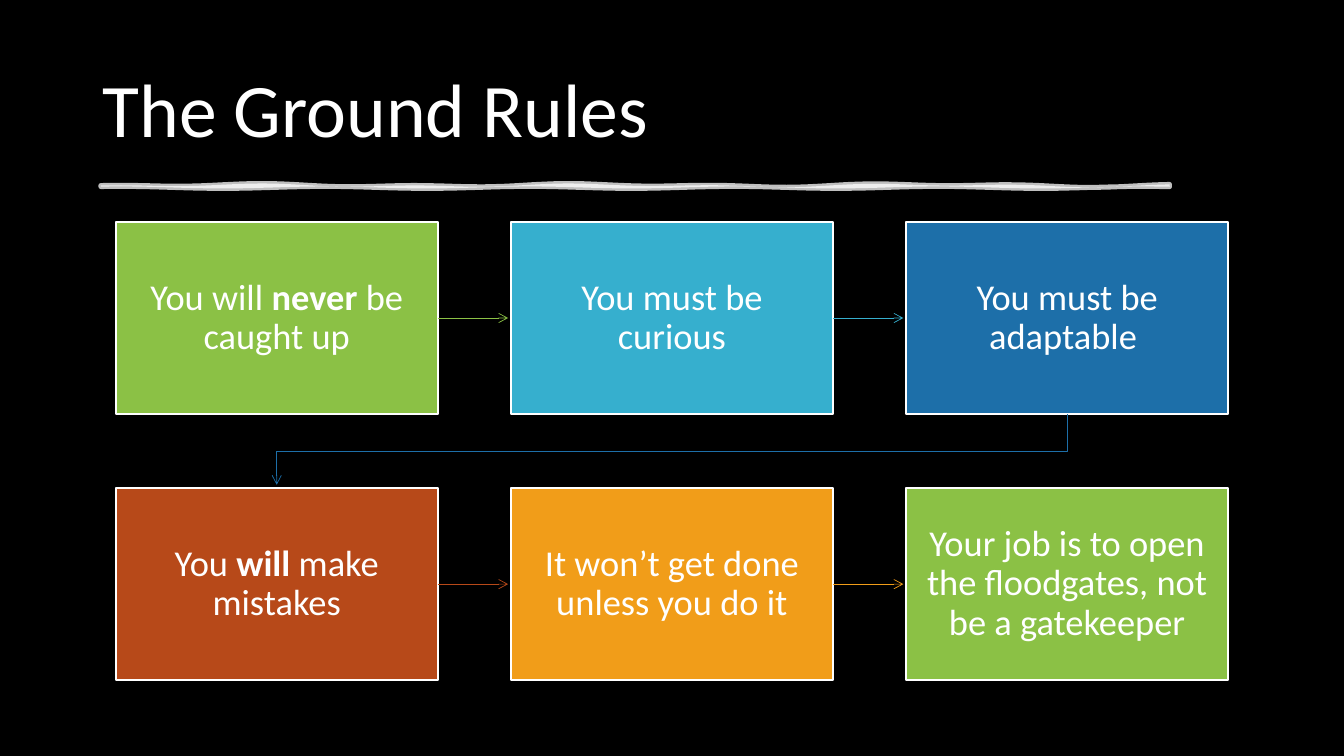
from math import sin
from lxml.etree import SubElement
from pptx import Presentation
from pptx.dml.color import RGBColor
from pptx.enum.shapes import MSO_CONNECTOR, MSO_SHAPE
from pptx.enum.text import MSO_ANCHOR, PP_ALIGN
from pptx.oxml.ns import qn
from pptx.util import Inches, Pt

COLORS = {
    "black": "000000", "white": "FFFFFF", "green": "8BC145", "cyan": "36AFCE",
    "blue": "1D6FA9", "rust": "B74919", "orange": "F19D19",
}
FONT = "Calibri"
COLUMNS = 3
ARROW_GAP = 0.03
RULES = [
    ("green", [("You will ", False), ("never", True), (" be caught up", False)]),
    ("cyan", [("You must be curious", False)]),
    ("blue", [("You must be adaptable ", False)]),
    ("rust", [("You ", False), ("will", True), (" make mistakes", False)]),
    ("orange", [("It won’t get done unless you do it", False)]),
    ("green", [("Your job is to open the floodgates, not be a gatekeeper", False)]),
]


def rgb(name):
    return RGBColor.from_string(COLORS[name])


def write_text(shape, spans, size, align=PP_ALIGN.LEFT, inset=0.1, inset_y=0.05):
    frame = shape.text_frame
    frame.word_wrap = True
    frame.vertical_anchor = MSO_ANCHOR.MIDDLE
    frame.margin_left = frame.margin_right = Inches(inset)
    frame.margin_top = frame.margin_bottom = Inches(inset_y)
    para = frame.paragraphs[0]
    para.alignment = align
    para.line_spacing = 0.9
    for text, bold in spans:
        span = para.add_run()
        span.text = text
        span.font.name = FONT
        span.font.size = Pt(size)
        span.font.bold = bold
        span.font.color.rgb = rgb("white")


def style_line(shape, color, width, arrow=False):
    shape.line.color.rgb = rgb(color)
    shape.line.width = Pt(width)
    if arrow:
        line = shape.line._get_or_add_ln()
        SubElement(line, qn("a:tailEnd"), type="arrow")


def draw_path(page, points, close):
    corners = [(Inches(x), Inches(y)) for x, y in points]
    builder = page.shapes.build_freeform(*corners[0])
    builder.add_line_segments(corners[1:], close=close)
    shape = builder.convert_to_shape()
    shape.shadow.inherit = False
    return shape


def add_title(page, left, top, width, height):
    box = page.shapes.add_textbox(*map(Inches, (left, top, width, height)))
    write_text(box, [("The Ground Rules", False)], 54)


def add_brush_stroke(page, left, top, width, height):
    steps = 106
    xs = [left + width * step / steps for step in range(steps + 1)]
    upper = [(x, top + 0.01 * sin(4.2 * x) + 0.01 * sin(1.9 * x)) for x in xs]
    lower = [(x, top + height + 0.01 * sin(3.1 * x + 1)) for x in reversed(xs)]
    stroke = draw_path(page, upper + lower, True)
    stroke.fill.solid()
    stroke.fill.fore_color.rgb = rgb("white")
    style_line(stroke, "white", 3.5)
    for color in stroke._element.spPr.iter(qn("a:srgbClr")):
        SubElement(color, qn("a:alpha"), val="75000")


def add_rule(page, color, spans, left, top, width, height):
    box = page.shapes.add_shape(MSO_SHAPE.RECTANGLE, *map(Inches, (left, top, width, height)))
    box.shadow.inherit = False
    box.fill.solid()
    box.fill.fore_color.rgb = rgb(color)
    style_line(box, "white", 1.5)
    write_text(box, spans, 26, PP_ALIGN.CENTER, 0.16, 0.16)
    return box


def add_arrow(page, box, color, length):
    x, y = box.left + box.width, box.top + box.height // 2
    arrow = page.shapes.add_connector(MSO_CONNECTOR.STRAIGHT, x, y, x + Inches(length), y)
    arrow.begin_connect(box, 3)
    style_line(arrow, color, 0.5, True)
    SubElement(arrow._element.spPr, qn("a:effectLst"))


def add_return_arrow(page, color, start, end, bend):
    points = [start, (start[0], bend), (end[0], bend), end]
    arrow = draw_path(page, points, False)
    arrow.fill.background()
    style_line(arrow, color, 0.5, True)


def add_rule_flow(page, left, top, width, height):
    box_width, box_height = 3.19, 1.91
    pitch_x = (width - box_width) / (COLUMNS - 1)
    pitch_y = height - box_height
    gap_x, gap_y = pitch_x - box_width, pitch_y - box_height
    for index, (color, spans) in enumerate(RULES):
        row, column = divmod(index, COLUMNS)
        x, y = left + column * pitch_x, top + row * pitch_y
        box = add_rule(page, color, spans, x, y, box_width, box_height)
        if column < COLUMNS - 1:
            add_arrow(page, box, color, gap_x - ARROW_GAP)
        elif index < len(RULES) - 1:
            bottom = y + box_height
            start = (x + box_width / 2, bottom)
            end = (left + box_width / 2, bottom + gap_y - ARROW_GAP)
            add_return_arrow(page, color, start, end, bottom + gap_y / 2)


def main():
    deck = Presentation()
    deck.slide_width, deck.slide_height = Inches(13.33), Inches(7.5)
    page = deck.slides.add_slide(deck.slide_layouts[6])
    page.background.fill.solid()
    page.background.fill.fore_color.rgb = rgb("black")
    add_title(page, 0.92, 0.4, 11.5, 1.45)
    add_brush_stroke(page, 1, 1.84, 10.6, 0.02)
    add_rule_flow(page, 1.15, 2.2, 11.03, 4.55)
    deck.save("out.pptx")


if __name__ == "__main__":
    main()
